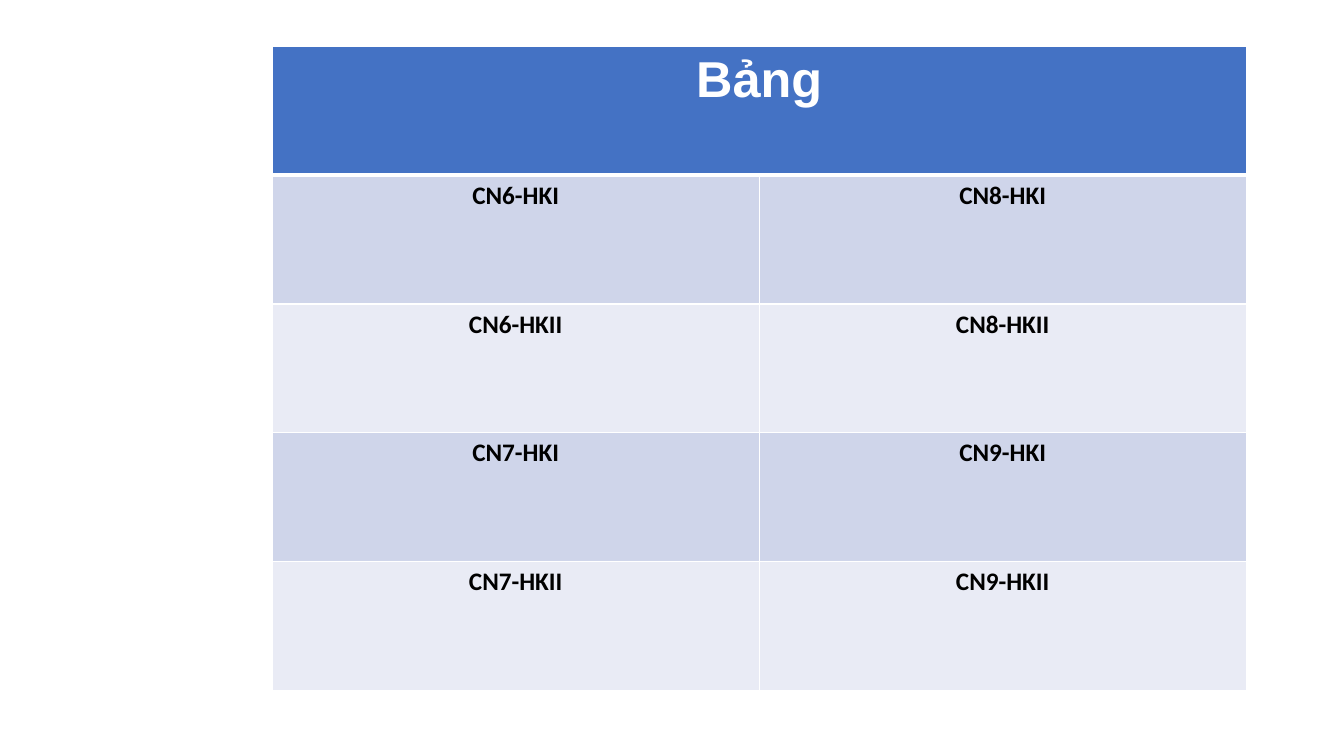
from pptx import Presentation
from pptx.dml.color import RGBColor
from pptx.enum.text import PP_ALIGN
from pptx.oxml.ns import qn
from pptx.util import Inches, Pt
from lxml import etree

CENTER = PP_ALIGN.CENTER
SLIDE_W, SLIDE_H = 13.33, 7.5
COLORS = {"header": "4472C4", "odd": "CFD5EA", "even": "E9EBF5",
          "line": "FFFFFF", "light": "FFFFFF", "dark": "000000"}
HEADER_FONT = {"name": "Arial", "size": Pt(36), "bold": True}
BODY_FONT = {"name": "Calibri", "size": Pt(18), "bold": True}
TITLE = "Bảng"
GRADE_COLUMNS = [(6, 7), (8, 9)]
TERMS = ("HKI", "HKII")


def set_borders(cell, bottom=1, top=1):
    tcPr = cell._tc.get_or_add_tcPr()
    for side, width in (("L", 1), ("R", 1), ("T", top), ("B", bottom)):
        ln = etree.SubElement(tcPr, qn(f"a:ln{side}"), w=str(Pt(width)))
        fill = etree.SubElement(ln, qn("a:solidFill"))
        etree.SubElement(fill, qn("a:srgbClr"), val=COLORS["line"])


def fill_cell(cell, text, fill, color, font):
    cell.fill.solid()
    cell.fill.fore_color.rgb = RGBColor.from_string(COLORS[fill])
    p = cell.text_frame.paragraphs[0]
    p.alignment = CENTER
    r = p.add_run()
    r.text = text
    for name, value in font.items():
        setattr(r.font, name, value)
    r.font.color.rgb = RGBColor.from_string(COLORS[color])


def add_grade_table(s, left, top, width, height):
    columns = [[f"CN{grade}-{term}" for grade in grades for term in TERMS]
               for grades in GRADE_COLUMNS]
    rows = list(zip(*columns))
    table = s.shapes.add_table(len(rows) + 1, len(columns), Inches(left), Inches(top),
                               Inches(width), Inches(height)).table

    # Header across all columns
    header = table.cell(0, 0)
    header.merge(table.cell(0, len(columns) - 1))
    for col in range(len(columns)):
        set_borders(table.cell(0, col), bottom=3)
    fill_cell(header, TITLE, "header", "light", HEADER_FONT)

    # Banded rows, one per grade and term
    for row, labels in enumerate(rows, 1):
        for col, label in enumerate(labels):
            cell = table.cell(row, col)
            set_borders(cell, top=3 if row == 1 else 1)
            fill_cell(cell, label, "odd" if row % 2 else "even", "dark", BODY_FONT)


def main():
    prs = Presentation()
    prs.slide_width, prs.slide_height = Inches(SLIDE_W), Inches(SLIDE_H)
    s = prs.slides.add_slide(prs.slide_layouts[6])
    add_grade_table(s, 2.7, 0.46, 9.66, 6.39)
    prs.save("out.pptx")


if __name__ == "__main__":
    main()
